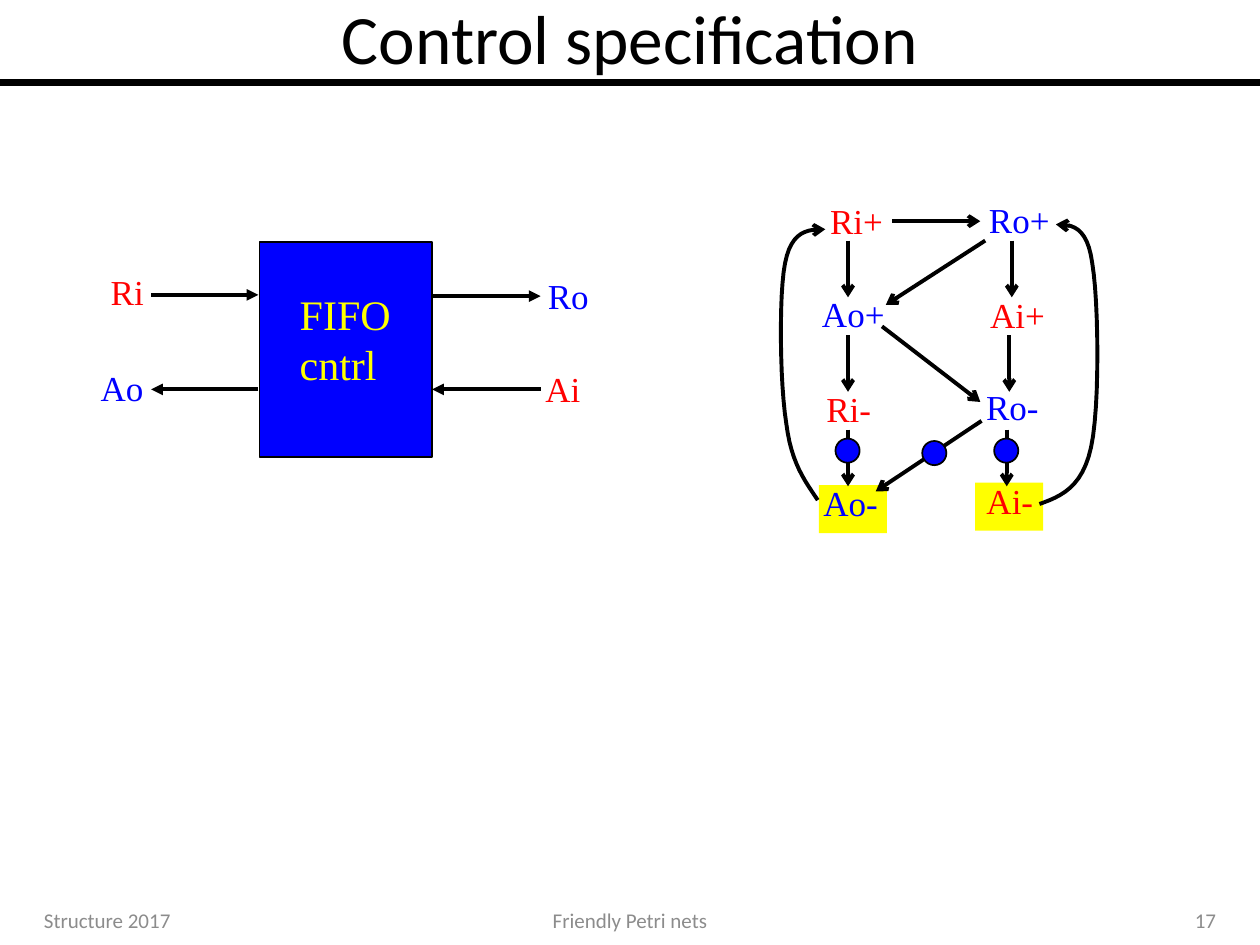
"""Build the control specification slide with a FIFO block and its signal graph."""
from dataclasses import dataclass

from lxml import etree
from pptx import Presentation
from pptx import util as u
from pptx.dml.color import RGBColor
from pptx.enum import shapes, text
from pptx.oxml.ns import qn

COLORS = {"black": "000000", "blue": "0000FF", "red": "FF0000",
          "yellow": "FFFF00", "grey": "8C8C8C"}
SERIF, SANS = "Times New Roman", "Calibri"
LABEL_H, DOT, STEP, DROP = 31, 13.8, 54, 32.4


@dataclass
class Label:
    text: str
    x: float
    y: float
    w: float


@dataclass
class Arrow:
    x1: float
    y1: float
    x2: float
    y2: float


@dataclass
class Loop:
    points: list


BLOCK_LABELS = [
    Label("Ri", 56.2, 151.2, 36), Label("Ro", 306, 153.4, 39),
    Label("Ao", 50.4, 205.9, 40), Label("Ai", 304.6, 206.6, 36),
]
BLOCK_ARROWS = [
    Arrow(86.4, 168.5, 147.6, 168.5), Arrow(247.7, 169.2, 308.9, 169.2),
    Arrow(147.6, 222.5, 86.4, 222.5), Arrow(308.9, 222.5, 247, 222.5),
]
GRAPH_LABELS = [
    Label("Ri+", 467.3, 110.5, 45.4), Label("Ao+", 462.6, 163.4, 50.6),
    Label("Ri-", 465.1, 217.8, 40.3), Label("Ao-", 463.4, 271.4, 45.4),
    Label("Ro+", 558, 109.8, 49.4), Label("Ai+", 558.7, 164.2, 46.2),
    Label("Ro-", 556.4, 216.7, 44.8), Label("Ai-", 556.6, 270.7, 41.2),
]
CROSS_ARROWS = [
    Arrow(509.8, 126.4, 560.2, 126.4), Arrow(563, 137.5, 506.2, 174.2),
    Arrow(504, 186.5, 560.2, 229.7), Arrow(560.9, 240.5, 500.4, 280.8),
]
LOOPS = [
    Loop([(467.3, 285.8), (460.1, 275), (452.2, 265), (449.3, 241.9),
          (445.7, 219.6), (445, 168.5), (448.6, 150.5),
          (452.2, 131.8), (461.5, 131), (471.6, 131)]),
    Loop([(594, 288), (606.2, 283.7), (618.5, 278.6), (623.5, 255.6),
          (628.6, 232.6), (627.8, 171.4), (624.2, 150.5),
          (621.4, 128.9), (612, 128.2), (603.4, 128.2)]),
]
DOTS = [(477.4, 250.6), (568.1, 250.6), (527, 252)]
MARKS = [(557.3, 275.8), (468, 277.2)]


def rgb(name: str) -> RGBColor:
    return RGBColor.from_string(COLORS[name])


def write(tf, content: str, *, size: float, color: str, font: str = SERIF,
          align=text.PP_ALIGN.LEFT, anchor=text.MSO_ANCHOR.TOP,
          wrap: bool = False, fit=text.MSO_AUTO_SIZE.SHAPE_TO_FIT_TEXT) -> None:
    tf.word_wrap, tf.auto_size, tf.vertical_anchor = wrap, fit, anchor
    for i, line in enumerate(content.split("\n")):
        p = tf.add_paragraph() if i else tf.paragraphs[0]
        p.alignment = align
        r = p.add_run()
        r.text = line
        r.font.size, r.font.name = u.Pt(size), font
        r.font.color.rgb = rgb(color)


def add_text(parent, content: str, x: float, y: float, w: float, h: float,
             **fmt) -> None:
    sp = parent.add_textbox(u.Pt(x), u.Pt(y), u.Pt(w), u.Pt(h))
    write(sp.text_frame, content, **fmt)


def add_label(parent, label: Label) -> None:
    color = "red" if "i" in label.text else "blue"
    add_text(parent, label.text, label.x, label.y, label.w, LABEL_H,
             size=20, color=color)


def add_box(parent, kind, x: float, y: float, w: float, h: float, fill: str,
            outlined: bool = True) -> None:
    sp = parent.add_shape(kind, u.Pt(x), u.Pt(y), u.Pt(w), u.Pt(h))
    sp.shadow.inherit = False
    sp.fill.solid()
    sp.fill.fore_color.rgb = rgb(fill)
    if outlined:
        sp.line.color.rgb, sp.line.width = rgb("black"), u.Pt(1)
    else:
        sp.line.fill.background()


def set_stroke(sp, width: float, head: str) -> None:
    sp.line.color.rgb, sp.line.width = rgb("black"), u.Pt(width)
    if head:
        ln = sp.element.spPr.find(qn("a:ln"))
        etree.SubElement(ln, qn("a:tailEnd"), type=head)


def add_line(parent, a: Arrow, head: str = "arrow", width: float = 2.25) -> None:
    sp = parent.add_connector(shapes.MSO_CONNECTOR.STRAIGHT, u.Pt(a.x1),
                              u.Pt(a.y1), u.Pt(a.x2), u.Pt(a.y2))
    set_stroke(sp, width, head)
    etree.SubElement(sp.element.spPr, qn("a:effectLst"))


def curve_points(points: list, steps: int = 12) -> list:
    result = []
    for start in range(0, len(points) - 1, 3):
        controls = points[start:start + 4]
        for k in range(1, steps + 1):
            t = k / steps
            weights = ((1 - t) ** 3, 3 * t * (1 - t) ** 2,
                       3 * t * t * (1 - t), t ** 3)
            result.append(tuple(u.Pt(sum(w * c[axis] for w, c in
                                         zip(weights, controls)))
                                for axis in (0, 1)))
    return result


def add_loop(parent, loop: Loop) -> None:
    x, y = loop.points[0]
    builder = parent.build_freeform(u.Pt(x), u.Pt(y))
    builder.add_line_segments(curve_points(loop.points), close=False)
    sp = builder.convert_to_shape()
    sp.shadow.inherit = False
    sp.fill.background()
    set_stroke(sp, 2.25, "arrow")


def draw_block(parent) -> None:
    add_box(parent, shapes.MSO_SHAPE.RECTANGLE, 148.3, 138.2, 98.6, 123.1, "blue")
    for a in BLOCK_ARROWS:
        add_line(parent, a, "triangle")
    for label in BLOCK_LABELS:
        add_label(parent, label)
    add_text(parent, "FIFO\ncntrl", 164.2, 161.3, 69, 65.5, size=24, color="yellow")


def draw_graph(parent) -> None:
    for x, y in MARKS:
        add_box(parent, shapes.MSO_SHAPE.RECTANGLE, x, y, 38.9, 27.4, "yellow", False)
    for label in GRAPH_LABELS:
        add_label(parent, label)
    for x, shift in ((484.6, 0), (578.2, -1.45)):
        for row in range(3):
            top = 137.5 + row * STEP
            add_line(parent, Arrow(x + row * shift, top, x + row * shift, top + DROP))
    for loop in LOOPS:
        add_loop(parent, loop)
    for a in CROSS_ARROWS:
        add_line(parent, a)
    for x, y in DOTS:
        add_box(parent, shapes.MSO_SHAPE.OVAL, x, y, DOT, DOT, "blue")


def main() -> None:
    prs = Presentation()
    prs.slide_width, prs.slide_height = u.Pt(720), u.Pt(540)
    s = prs.slides.add_slide(prs.slide_layouts[5])
    add_line(s.shapes, Arrow(0, 47.1, 720, 47.1), "", 4)
    title = s.shapes.title
    title.left, title.top, title.width, title.height = map(u.Pt, (36, 0, 648, 41.8))
    write(title.text_frame, "Control specification", size=39.6, color="black",
          font=SANS, align=text.PP_ALIGN.CENTER, anchor=text.MSO_ANCHOR.MIDDLE,
          wrap=True, fit=text.MSO_AUTO_SIZE.NONE)
    draw_graph(s.shapes)
    draw_block(s.shapes.add_group_shape().shapes)
    for content, x, w, align in (
            ("Structure 2017", 18, 168, text.PP_ALIGN.LEFT),
            ("Friendly Petri nets", 246, 228, text.PP_ALIGN.CENTER),
            ("17", 534, 168, text.PP_ALIGN.RIGHT)):
        add_text(s.shapes, content, x, 511.2, w, 28.8, size=12, color="grey",
                 font=SANS, align=align, anchor=text.MSO_ANCHOR.MIDDLE,
                 wrap=True, fit=text.MSO_AUTO_SIZE.NONE)
    prs.save("out.pptx")


if __name__ == "__main__":
    main()
